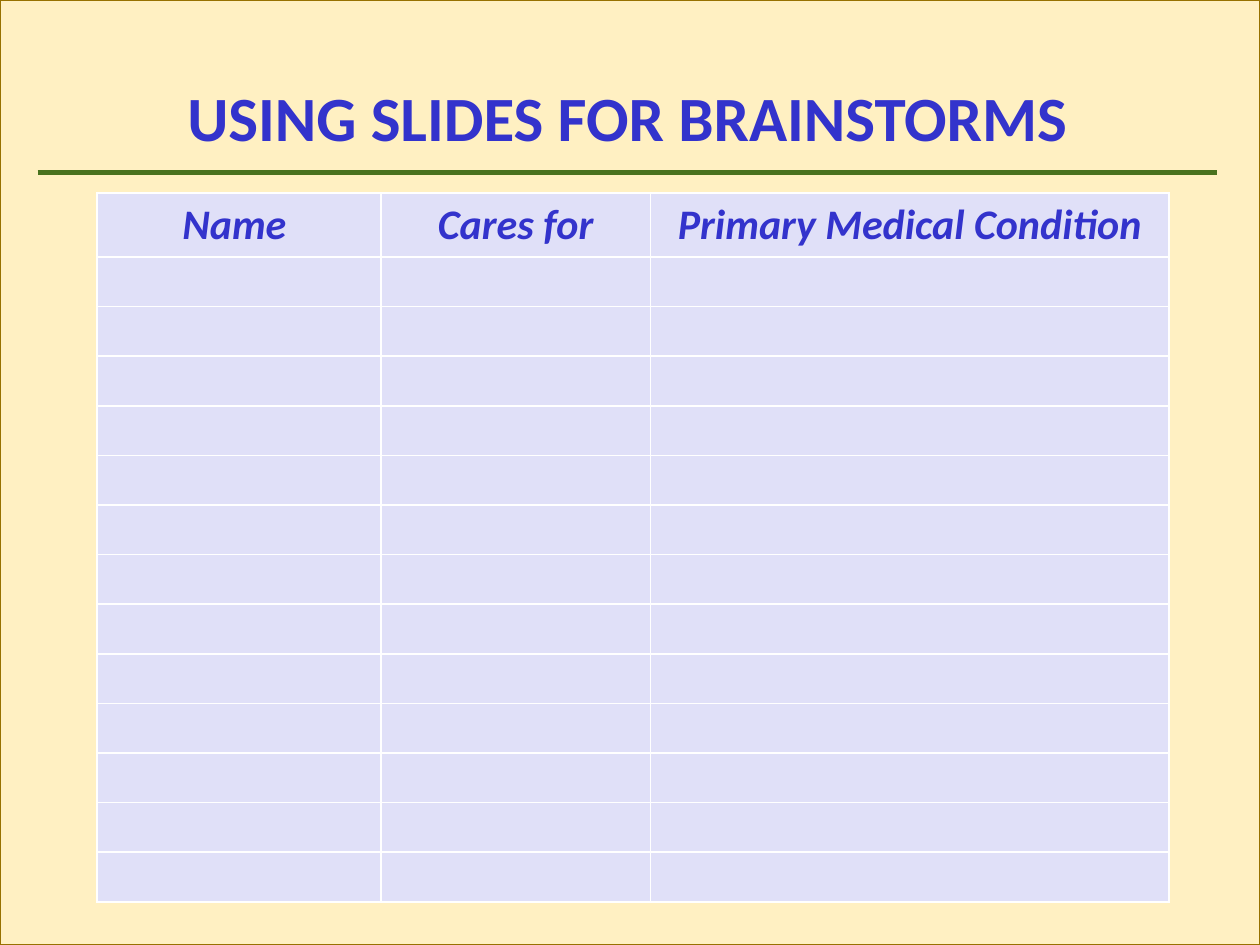
"""Build a brainstorm slide with a blank table to fill in."""
from lxml import etree
from pptx import Presentation
from pptx import util as u
from pptx.dml.color import RGBColor
from pptx.enum import shapes, text
from pptx.oxml import ns

HEADING = "USING SLIDES FOR BRAINSTORMS"
COLUMNS = [("Name ", 5.72), ("Cares for", 5.43), ("Primary Medical Condition", 10.46)]
BLANK_ROWS = 13
HEADER_HEIGHT, ROW_HEIGHT = 1.29, 1
TABLE_LEFT, TABLE_TOP = 1.96, 3.89
SLIDE_WIDTH, SLIDE_HEIGHT = 25.4, 19.05
RULE_LEFT, RULE_RIGHT, RULE_TOP = 0.76, 24.54, 3.48

CREAM, BROWN, GREEN = "FFF0C2", "977100", "49721E"
BLUE, LAVENDER, WHITE = "3333CC", "E0E0F8", "FFFFFF"
HEADING_FONT = {"name": "Calibri", "size": u.Pt(36), "bold": True}
HEADER_FONT = {"name": "Calibri", "size": u.Pt(24), "bold": True, "italic": True}
HEADING_FRAME = {"word_wrap": True, "vertical_anchor": text.MSO_ANCHOR.MIDDLE}
BLANK_CELL = {"margin_top": 0, "margin_bottom": 0}


def paint(color_format, color):
    color_format.rgb = RGBColor.from_string(color)


def fill(target, color):
    target.fill.solid()
    paint(target.fill.fore_color, color)


def outline(line, color, width):
    paint(line.color, color)
    line.width = u.Pt(width)


def apply(target, values):
    for attribute, value in values.items():
        setattr(target, attribute, value)


def write(frame, words, font):
    paragraph = frame.paragraphs[0]
    paragraph.alignment = text.PP_ALIGN.CENTER
    run = paragraph.add_run()
    run.text = words
    apply(run.font, font)
    paint(run.font.color, BLUE)


def border(cell, color, width):
    properties = cell._tc.get_or_add_tcPr()
    for side in ("a:lnL", "a:lnR", "a:lnT", "a:lnB"):
        edge = etree.SubElement(properties, ns.qn(side), w=str(u.Pt(width)))
        solid = etree.SubElement(edge, ns.qn("a:solidFill"))
        etree.SubElement(solid, ns.qn("a:srgbClr"), val=color)


def add_backdrop(slide):
    backdrop = slide.shapes.add_shape(
        shapes.MSO_SHAPE.RECTANGLE, 0, 0, u.Cm(SLIDE_WIDTH), u.Cm(SLIDE_HEIGHT))
    backdrop.shadow.inherit = False
    fill(backdrop, CREAM)
    outline(backdrop.line, BROWN, 1)


def add_heading(slide):
    rule = slide.shapes.add_connector(
        shapes.MSO_CONNECTOR.STRAIGHT,
        u.Cm(RULE_LEFT), u.Cm(RULE_TOP), u.Cm(RULE_RIGHT), u.Cm(RULE_TOP))
    outline(rule.line, GREEN, 3)
    etree.SubElement(rule._element.spPr, ns.qn("a:effectLst"))
    heading = slide.shapes.add_textbox(
        u.Cm(RULE_LEFT), u.Cm(0.76), u.Cm(RULE_RIGHT - RULE_LEFT), u.Cm(3.18))
    apply(heading.text_frame, HEADING_FRAME)
    write(heading.text_frame, HEADING, HEADING_FONT)


def add_brainstorm_table(slide):
    heights = [HEADER_HEIGHT] + [ROW_HEIGHT] * BLANK_ROWS
    table_width = sum(width for _, width in COLUMNS)
    brainstorm = slide.shapes.add_table(
        len(heights), len(COLUMNS), u.Cm(TABLE_LEFT), u.Cm(TABLE_TOP),
        u.Cm(table_width), u.Cm(sum(heights))).table
    for row, height in zip(brainstorm.rows, heights):
        row.height = u.Cm(height)
    for cell in brainstorm.iter_cells():
        border(cell, WHITE, 1)
        fill(cell, LAVENDER)
    for index, (label, width) in enumerate(COLUMNS):
        brainstorm.columns[index].width = u.Cm(width)
        write(brainstorm.cell(0, index).text_frame, label, HEADER_FONT)
        for row in range(1, len(heights)):
            apply(brainstorm.cell(row, index), BLANK_CELL)


def main():
    deck = Presentation()
    deck.slide_width, deck.slide_height = u.Cm(SLIDE_WIDTH), u.Cm(SLIDE_HEIGHT)
    slide = deck.slides.add_slide(deck.slide_layouts[6])
    add_backdrop(slide)
    add_heading(slide)
    add_brainstorm_table(slide)
    deck.save("out.pptx")


if __name__ == "__main__":
    main()
